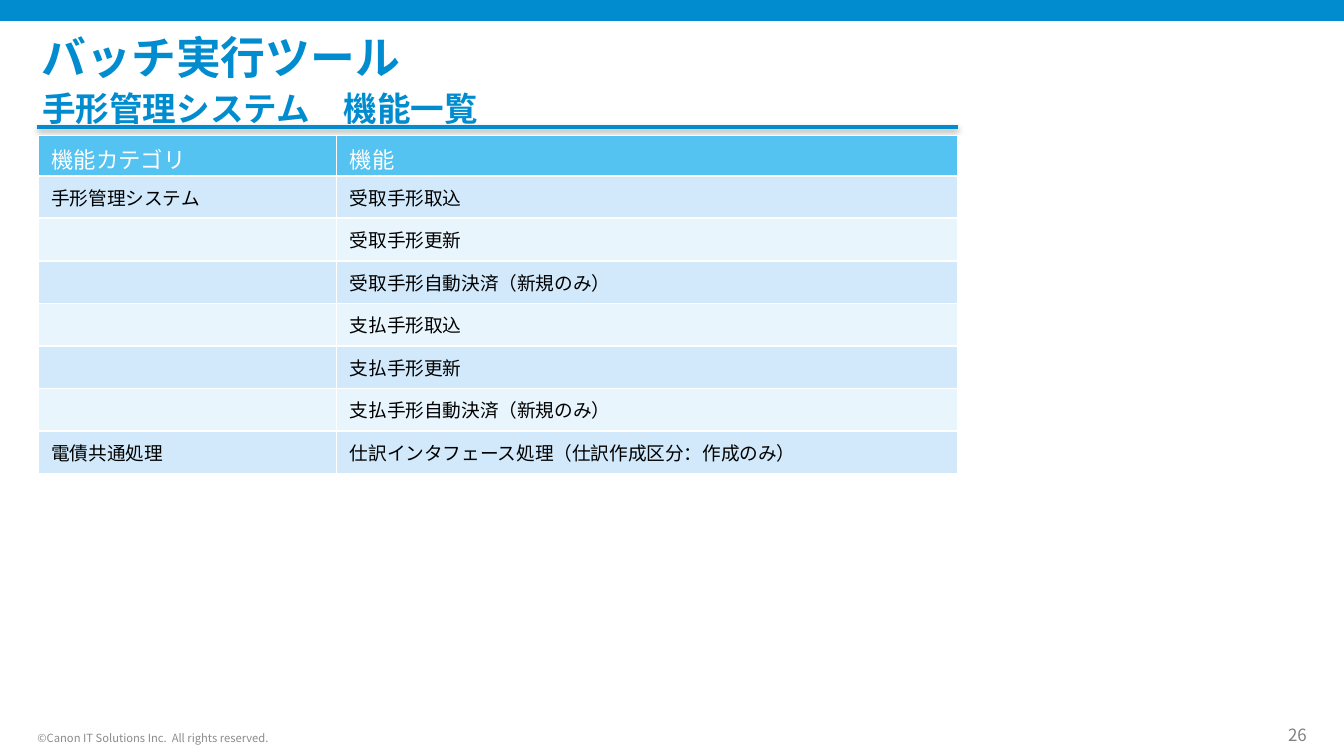
import pptx
import pptx.util
import pptx.dml.color
import pptx.enum.shapes
import pptx.enum.text
import pptx.oxml
import pptx.oxml.ns
import lxml.etree

Pt = pptx.util.Pt
Align = pptx.enum.text.PP_ALIGN
Anchor = pptx.enum.text.MSO_ANCHOR


class Theme:
    font = "Noto Sans CJK JP"
    brand = "008CCF"
    head = "54C3F1"
    bands = ("D1E9FA", "E9F5FC")
    white = "FFFFFF"
    black = "000000"
    gray = "808080"
    pale = "8C8C8C"
    title = 24
    body = 18
    label = 12
    cell = 10
    page = 9
    note = 6


def color(code):
    return pptx.dml.color.RGBColor.from_string(code)


class Maker:
    def __init__(self, theme, slide):
        self.theme = theme
        self.slide = slide

    def style(self, para, size, code, bold=False):
        for run in para.runs:
            font = run.font
            font.name = self.theme.font
            font.size = Pt(size)
            font.bold = bold
            font.color.rgb = color(code)
            east = lxml.etree.SubElement(
                run._r.get_or_add_rPr(), pptx.oxml.ns.qn("a:ea"))
            east.set("typeface", self.theme.font)

    def bar(self, left, top, width, height, code):
        shape = self.slide.shapes.add_shape(
            pptx.enum.shapes.MSO_SHAPE.RECTANGLE,
            Pt(left), Pt(top), Pt(width), Pt(height))
        shape.shadow.inherit = False
        shape.fill.solid()
        shape.fill.fore_color.rgb = color(code)
        shape.line.fill.background()

    def rule(self, left, right, top, width, code):
        line = self.slide.shapes.add_connector(
            pptx.enum.shapes.MSO_CONNECTOR.STRAIGHT,
            Pt(left), Pt(top), Pt(right), Pt(top))
        line.line.color.rgb = color(code)
        line.line.width = Pt(width)
        line._element.spPr.append(pptx.oxml.parse_xml(
            f'<a:effectLst {pptx.oxml.ns.nsdecls("a")}>'
            f'<a:outerShdw blurRad="{Pt(3.1)}" dist="{Pt(1.6)}" dir="5400000" '
            f'rotWithShape="0"><a:srgbClr val="{self.theme.black}">'
            '<a:alpha val="38000"/></a:srgbClr></a:outerShdw></a:effectLst>'))

    def text(self, words, left, top, width, height, size, code, bold=False,
             align=Align.LEFT, anchor=Anchor.MIDDLE, inset=(0, 0)):
        box = self.slide.shapes.add_textbox(
            Pt(left), Pt(top), Pt(width), Pt(height))
        frame = box.text_frame
        frame.word_wrap = True
        frame.vertical_anchor = anchor
        frame.margin_left = frame.margin_right = Pt(inset[0])
        frame.margin_top = frame.margin_bottom = Pt(inset[1])
        frame.text = words
        para = frame.paragraphs[0]
        para.alignment = align
        self.style(para, size, code, bold)

    def table(self, rows, left, top, widths, heights):
        theme = self.theme
        grid = self.slide.shapes.add_table(
            len(rows), len(widths), Pt(left), Pt(top),
            Pt(sum(widths)), Pt(sum(heights))).table
        for col, width in zip(grid.columns, widths):
            col.width = Pt(width)
        for r, (row, height) in enumerate(zip(rows, heights)):
            grid.rows[r].height = Pt(height)
            if r == 0:
                fill, size, code = theme.head, theme.label, theme.white
            else:
                fill, size, code = theme.bands[(r - 1) % 2], theme.cell, theme.black
            for c, words in enumerate(row):
                cell = grid.cell(r, c)
                cell.fill.solid()
                cell.fill.fore_color.rgb = color(fill)
                cell.vertical_anchor = Anchor.MIDDLE
                para = cell.text_frame.paragraphs[0]
                para.font.size = Pt(size)
                if words:
                    para.text = words
                    self.style(para, size, code)


def main():
    deck = pptx.Presentation()
    deck.slide_width = Pt(720)
    deck.slide_height = Pt(405)
    theme = Theme()
    make = Maker(theme, deck.slides.add_slide(deck.slide_layouts[6]))

    make.bar(0, 0, 720, 11.2, theme.brand)
    make.rule(20, 513.3, 68, 2, theme.brand)
    make.text("26", 672, 388, 28, 11, theme.page, theme.gray,
              align=Align.RIGHT, anchor=Anchor.BOTTOM)
    make.text("バッチ実行ツール", 22.3, 16.5, 567, 28,
              theme.title, theme.brand, bold=True)
    make.text("©Canon IT Solutions Inc.  All rights reserved.",
              20, 388, 170, 11, theme.note, theme.pale, anchor=Anchor.BOTTOM)
    make.text("手形管理システム　機能一覧", 15.5, 45.5, 482, 25,
              theme.body, theme.brand, bold=True, inset=(7.2, 3.6))

    rows = [
        ("機能カテゴリ", "機能"),
        ("手形管理システム", "受取手形取込"),
        ("", "受取手形更新"),
        ("", "受取手形自動決済（新規のみ）"),
        ("", "支払手形取込"),
        ("", "支払手形更新"),
        ("", "支払手形自動決済（新規のみ）"),
        ("電債共通処理", "仕訳インタフェース処理（仕訳作成区分：作成のみ）"),
    ]
    heights = [20.4] + [22.8] * (len(rows) - 1)
    make.table(rows, 20.3, 72.5, (160, 332.8), heights)

    deck.save("out.pptx")


if __name__ == "__main__":
    main()
